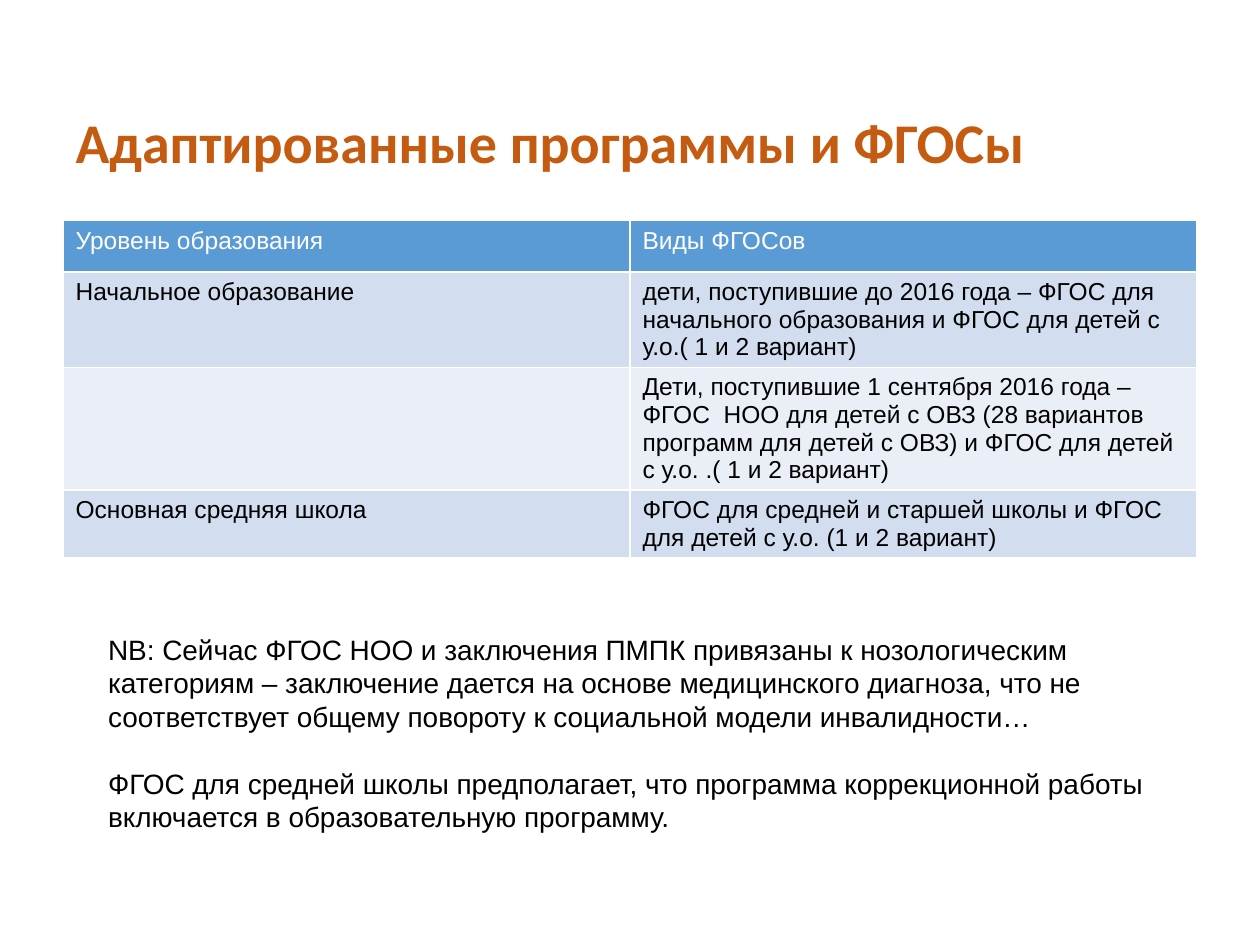
from pptx import Presentation
from pptx.dml.color import RGBColor
from pptx.enum.text import MSO_ANCHOR, MSO_AUTO_SIZE, PP_ALIGN
from pptx.util import Inches, Pt

TITLE = "Адаптированные программы и ФГОСы"
LEVELS = [
    ("Уровень образования", "Виды ФГОСов"),
    ("Начальное образование",
     "дети, поступившие до 2016 года – ФГОС для начального образования "
     "и ФГОС для детей с у.о.( 1 и 2 вариант)"),
    ("",
     "Дети, поступившие 1 сентября 2016 года – ФГОС  НОО для детей с ОВЗ "
     "(28 вариантов программ для детей с ОВЗ) и ФГОС для детей с у.о. "
     ".( 1 и 2 вариант)"),
    ("Основная средняя школа",
     "ФГОС для средней и старшей школы и ФГОС для детей с у.о. "
     "(1 и 2 вариант)"),
]
ROW_HEIGHTS = [0.41, 0.41, 0.44, 0.44]
REMARKS = [
    "NB: Сейчас ФГОС НОО и заключения ПМПК привязаны к нозологическим "
    "категориям – заключение дается на основе медицинского диагноза, что не "
    "соответствует общему повороту к социальной модели инвалидности…",
    "ФГОС для средней школы предполагает, что программа коррекционной работы "
    "включается в образовательную программу.",
]


def color(value):
    """Turn a hex string into a colour."""
    return RGBColor.from_string(value)


def add_text(paragraph, text, size, hue="000000", font="Arial", bold=False):
    """Add one formatted run to a paragraph."""
    run = paragraph.add_run()
    run.text = text
    run.font.name = font
    run.font.size = Pt(size)
    run.font.bold = bold
    run.font.color.rgb = color(hue)


def set_title(slide):
    """Place and format the title placeholder."""
    title = slide.shapes.title
    title.left, title.top = Inches(0.5), Inches(0.6)
    title.width, title.height = Inches(9), Inches(1.1)
    frame = title.text_frame
    frame.word_wrap = True
    frame.vertical_anchor = MSO_ANCHOR.MIDDLE
    heading = frame.paragraphs[0]
    heading.alignment = PP_ALIGN.LEFT
    heading.line_spacing = 0.9
    add_text(heading, TITLE, 32, "C55A11", "Calibri", True)


def add_levels_table(slide):
    """Add the table of education levels and their standards."""
    levels = slide.shapes.add_table(
        len(LEVELS), 2, Inches(0.5), Inches(1.75),
        Inches(9), Inches(sum(ROW_HEIGHTS))).table
    for index, (entries, height) in enumerate(zip(LEVELS, ROW_HEIGHTS)):
        levels.rows[index].height = Inches(height)
        band = "5B9BD5" if index == 0 else ("EAEFF7", "D2DEEF")[index % 2]
        for column, entry in enumerate(entries):
            cell = levels.cell(index, column)
            cell.fill.solid()
            cell.fill.fore_color.rgb = color(band)
            if entry:
                add_text(cell.text_frame.paragraphs[0], entry, 14,
                         "000000" if index else "FFFFFF")


def add_remarks(slide):
    """Add the remarks below the table."""
    frame = slide.shapes.add_textbox(
        Inches(0.76), Inches(4.97), Inches(8.74), Inches(1.72)).text_frame
    frame.word_wrap = True
    frame.auto_size = MSO_AUTO_SIZE.SHAPE_TO_FIT_TEXT
    for index, remark in enumerate(REMARKS):
        paragraph = frame.add_paragraph() if index else frame.paragraphs[0]
        paragraph.space_before = Pt(19 if index else 0)
        add_text(paragraph, remark, 16)


def main():
    """Build and save the slide."""
    deck = Presentation()
    deck.slide_width, deck.slide_height = Inches(10), Inches(7.5)
    slide = deck.slides.add_slide(deck.slide_layouts[5])
    set_title(slide)
    add_levels_table(slide)
    add_remarks(slide)
    deck.save("out.pptx")


if __name__ == "__main__":
    main()
